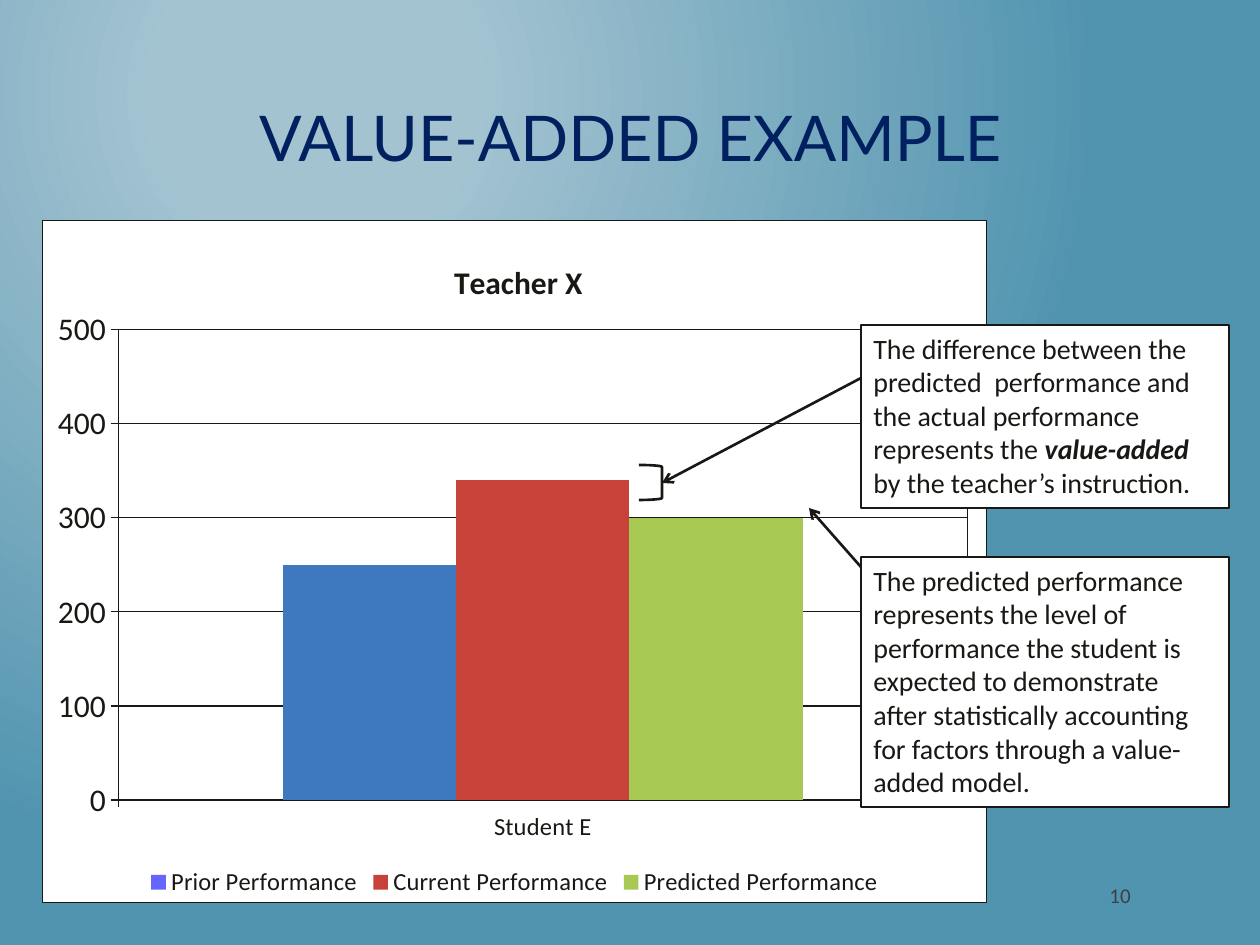
import pptx
import pptx.chart.data
import pptx.dml.color
import pptx.enum.chart
import pptx.enum.shapes
import pptx.enum.text
import pptx.oxml
import pptx.oxml.ns
import pptx.util

RGBColor = pptx.dml.color.RGBColor
INK = RGBColor(0x19, 0x18, 0x14)
WHITE = RGBColor(0xFF, 0xFF, 0xFF)
NAVY = RGBColor(0x00, 0x20, 0x60)
GRAY = RGBColor(0x40, 0x40, 0x40)
SKY = RGBColor(0xA3, 0xC3, 0xD1)
TEAL = RGBColor(0x51, 0x94, 0xAF)
VIOLET = RGBColor(0x66, 0x66, 0xFF)
BLUE = RGBColor(0x3E, 0x79, 0xC0)
RED = RGBColor(0xC7, 0x43, 0x39)
GREEN = RGBColor(0xA7, 0xC9, 0x53)

Align = pptx.enum.text.PP_ALIGN
Anchor = pptx.enum.text.MSO_ANCHOR
Shape = pptx.enum.shapes.MSO_SHAPE
PX = 914400 / 126


def px(*lengths):
    return [pptx.util.Emu(round(length * PX)) for length in lengths]


def xml(tag, content="", attributes=""):
    prefix = tag.split(":")[0]
    names = pptx.oxml.ns.nsdecls(*{prefix, "a"})
    return pptx.oxml.parse_xml(f"<{tag} {names} {attributes}>{content}</{tag}>")


def set_font(font, **values):
    color = values.pop("color", None)
    for name, value in values.items():
        setattr(font, name, pptx.util.Pt(value) if name == "size" else value)
    if color is not None:
        font.color.rgb = color


def set_line(line, width):
    line.color.rgb = INK
    line.width = pptx.util.Pt(width)


def place(element, index, **fractions):
    """Give a chart part a manual layout in fractions of the chart area."""
    for old in element.findall(pptx.oxml.ns.qn("c:layout")):
        element.remove(old)
    modes = '<c:layoutTarget val="inner"/>' if "w" in fractions else ""
    modes += '<c:xMode val="edge"/><c:yMode val="edge"/>'
    sizes = "".join(f'<c:{key} val="{value}"/>' for key, value in fractions.items())
    element.insert(index, xml(
        "c:layout", f"<c:manualLayout>{modes}{sizes}</c:manualLayout>"))


class SlideBuilder:
    def __init__(self, deck):
        self.page = deck.slides.add_slide(deck.slide_layouts[5])
        self.body = {"name": "Calibri", "size": 16, "color": INK}

    def background(self, inner, outer):
        """Fill the page with a circular gradient centred toward the upper left."""
        self.page.background.fill.solid()
        properties = self.page.background._cSld.bg.bgPr
        stops = "".join(
            f'<a:gs pos="{position}"><a:srgbClr val="{color}"/></a:gs>'
            for position, color in ((20000, inner), (100000, outer)))
        focus = '<a:fillToRect l="50000" t="20000" r="100000" b="100000"/>'
        properties.replace(properties[0], xml(
            "a:gradFill", f'<a:gsLst>{stops}</a:gsLst><a:path path="circle">{focus}</a:path>',
            'rotWithShape="1"'))

    def add_text(self, frame, runs, align=Align.LEFT, **style):
        frame.word_wrap = True
        para = frame.paragraphs[0]
        para.alignment = align
        for text, changes in runs:
            span = para.add_run()
            span.text = text
            set_font(span.font, **{**self.body, **style, **changes})

    def title(self, text, left, top, width, height):
        box = self.page.shapes.title
        box.left, box.top, box.width, box.height = px(left, top, width, height)
        box.text_frame.vertical_anchor = Anchor.MIDDLE
        self.add_text(box.text_frame, [(text, {})], Align.CENTER,
                      name="Lato", size=36, color=NAVY)

    def page_number(self, text, left, top, width, height):
        box = self.page.shapes.add_textbox(*px(left, top, width, height))
        self.add_text(box.text_frame, [(text, {})], Align.RIGHT, size=12, color=GRAY)

    def outline(self, kind, left, top, width, height):
        shape = self.page.shapes.add_shape(kind, *px(left, top, width, height))
        shape.shadow.inherit = False
        shape.fill.background()
        set_line(shape.line, 1.5)
        return shape

    def callout(self, runs, left, top, width, height):
        box = self.outline(Shape.RECTANGLE, left, top, width, height)
        box.fill.solid()
        box.fill.fore_color.rgb = WHITE
        box.text_frame.vertical_anchor = Anchor.TOP
        self.add_text(box.text_frame, runs)

    def arrow(self, *ends):
        line = self.page.shapes.add_connector(
            pptx.enum.shapes.MSO_CONNECTOR.STRAIGHT, *px(*ends))
        set_line(line.line, 1.5)
        line.line._get_or_add_ln().append(xml("a:tailEnd", attributes='type="arrow"'))
        line._element.spPr.append(xml("a:effectLst"))

    def column_chart(self, heading, category, series, left, top, width, height):
        """Series are (name, value, legend colour, column colour)."""
        data = pptx.chart.data.CategoryChartData()
        data.categories = [category]
        for name, value, *_ in series:
            data.add_series(name, [value])
        chart = self.page.shapes.add_chart(
            pptx.enum.chart.XL_CHART_TYPE.COLUMN_CLUSTERED,
            *px(left, top, width, height), data).chart
        set_font(chart.font, name="Calibri", size=10, color=INK)

        chart.has_title = True
        self.add_text(chart.chart_title.text_frame, [(heading, {})],
                      Align.CENTER, size=18, bold=True)
        chart.has_legend = True
        chart.legend.position = pptx.enum.chart.XL_LEGEND_POSITION.BOTTOM
        chart.legend.include_in_layout = False
        set_font(chart.legend.font, name="Calibri", size=14, color=INK)

        plot = chart.plots[0]
        plot.gap_width, plot.overlap, plot.vary_by_categories = 190, 0, False
        for item, (_, _, key_color, column_color) in zip(plot.series, series):
            item.format.fill.solid()
            item.format.fill.fore_color.rgb = key_color
            if column_color != key_color:
                point_fill = item.points[0].format.fill
                point_fill.solid()
                point_fill.fore_color.rgb = column_color

        for axis, size in ((chart.category_axis, 14), (chart.value_axis, 18)):
            axis.major_tick_mark = pptx.enum.chart.XL_TICK_MARK.OUTSIDE
            set_font(axis.tick_labels.font, name="Calibri", size=size, color=INK)
            set_line(axis.format.line, 0.75)
        scale = chart.value_axis
        scale.minimum_scale, scale.maximum_scale, scale.major_unit = 0, 500, 100
        set_line(scale.major_gridlines.format.line, 0.75)

        area = chart._chartSpace.chart.plotArea
        place(area, 0, x=0.08, y=0.16, w=0.9, h=0.69)
        place(chart.chart_title._element, 1, x=0.43, y=0.05)
        frame = (f'<a:solidFill><a:srgbClr val="{WHITE}"/></a:solidFill><a:ln w="9525">'
                 f'<a:solidFill><a:srgbClr val="{INK}"/></a:solidFill></a:ln>')
        area.append(xml("c:spPr", frame))
        chart._chartSpace.chart.addnext(xml("c:spPr", frame))


def main():
    deck = pptx.Presentation()
    deck.slide_width, deck.slide_height = px(1260, 945)
    slide = SlideBuilder(deck)
    slide.background(SKY, TEAL)
    slide.column_chart("Teacher X", "Student E", [
        ("Prior Performance", 250, VIOLET, BLUE),
        ("Current Performance", 340, RED, RED),
        ("Predicted Performance", 300, GREEN, GREEN),
    ], 42, 220, 945, 683)
    slide.page_number("10", 987, 876, 156, 50)
    slide.title("VALUE-ADDED EXAMPLE", 53, 63, 1155, 147)
    slide.outline(Shape.RIGHT_BRACKET, 639, 465, 23, 35)
    slide.callout([
        ("The difference between the predicted  performance and the actual "
         "performance represents the ", {}),
        ("value-added ", {"bold": True, "italic": True}),
        ("by the teacher’s instruction.", {}),
    ], 861, 325, 368, 183)
    slide.callout([
        ("The predicted performance represents the level of performance the student "
         "is expected to demonstrate after statistically accounting for factors "
         "through a value-added model.", {}),
    ], 861, 557, 368, 250)
    slide.arrow(861, 378, 662, 483)
    slide.arrow(861, 567, 809, 508)
    deck.save("out.pptx")


if __name__ == "__main__":
    main()
